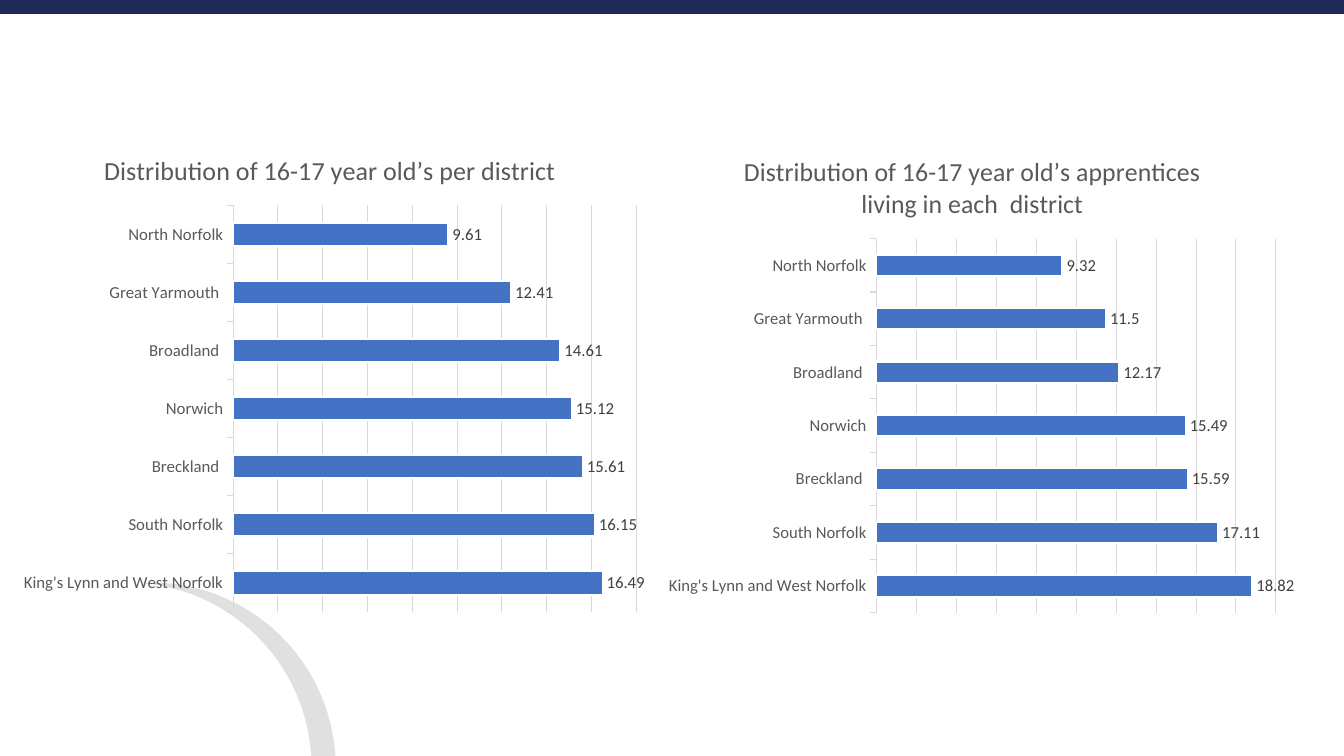
from dataclasses import dataclass

from pptx import Presentation
from pptx import util as u
from pptx.chart.data import CategoryChartData
from pptx.dml.color import RGBColor
from pptx.enum import chart as ch, shapes


@dataclass(frozen=True)
class Theme:
    font: str = "Calibri"
    white: str = "FFFFFF"
    navy: str = "1D2A5A"
    crescent: str = "E0E0E0"
    bar: str = "4472C4"
    grid: str = "D9D9D9"
    text: str = "595959"
    value: str = "404040"
    title_size: float = 18.6
    label_size: float = 12


T = Theme()

DISTRICTS = ["King's Lynn and West Norfolk", "South Norfolk", "Breckland ",
             "Norwich", "Broadland ", "Great Yarmouth ", "North Norfolk"]
RESIDENTS = [16.49, 16.15, 15.61, 15.12, 14.61, 12.41, 9.61]
APPRENTICES = [18.82, 17.11, 15.59, 15.49, 12.17, 11.5, 9.32]


def rgb(value):
    return RGBColor.from_string(value)


def style_font(font, size, color):
    font.name = T.font
    font.size = u.Pt(size)
    font.bold = False
    font.color.rgb = rgb(color)


def add_text(tf, text, *, size, color):
    r = tf.paragraphs[0].add_run()
    r.text = text
    style_font(r.font, size, color)


def style_line(line, color, width):
    line.color.rgb = rgb(color)
    line.width = u.Pt(width)


def add_filled(s, kind, x, y, w, h, color):
    sp = s.shapes.add_shape(kind, u.Cm(x), u.Cm(y), u.Cm(w), u.Cm(h))
    sp.shadow.inherit = False
    sp.fill.solid()
    sp.fill.fore_color.rgb = rgb(color)
    sp.line.fill.background()
    return sp


def add_backdrop(s, x, y, w):
    """Crescent at the foot and navy band across the top."""
    size, thickness = 9.32, 0.61
    for left, color in ((-0.86, T.crescent), (-0.86 - thickness, T.white)):
        add_filled(s, shapes.MSO_SHAPE.OVAL, x + left, y + 14.68,
                   size, size, color)
    band = add_filled(s, shapes.MSO_SHAPE.RECTANGLE, x, y, w, 0.33, T.navy)
    style_line(band.line, T.navy, 1)


def add_district_chart(s, x, y, w, h, title, values, top):
    """Bar chart of the share of each district, in the given box."""
    data = CategoryChartData()
    data.categories = DISTRICTS
    data.add_series("Series 1", values)
    chart = s.shapes.add_chart(ch.XL_CHART_TYPE.BAR_CLUSTERED, u.Cm(x),
                               u.Cm(y), u.Cm(w), u.Cm(h), data).chart
    style_font(chart.font, T.label_size, T.text)
    chart.has_legend = False
    chart.has_title = True
    add_text(chart.chart_title.text_frame, title,
             size=T.title_size, color=T.text)

    # Axes
    cat = chart.category_axis
    cat.major_tick_mark = ch.XL_TICK_MARK.OUTSIDE
    cat.minor_tick_mark = ch.XL_TICK_MARK.NONE
    cat.has_major_gridlines = False
    style_font(cat.tick_labels.font, T.label_size, T.text)
    style_line(cat.format.line, T.grid, 0.75)
    val = chart.value_axis
    val.visible = False
    val.minimum_scale, val.maximum_scale, val.major_unit = 0, top, 2
    val.has_major_gridlines = True
    style_line(val.major_gridlines.format.line, T.grid, 0.75)

    # Bars and their values
    plot = chart.plots[0]
    plot.gap_width = 150
    plot.vary_by_categories = False
    bars = plot.series[0]
    bars.format.fill.solid()
    bars.format.fill.fore_color.rgb = rgb(T.bar)
    style_line(bars.format.line, T.white, 1.5)
    labels = bars.data_labels
    labels.show_value = True
    labels.position = ch.XL_LABEL_POSITION.OUTSIDE_END
    style_font(labels.font, T.label_size, T.value)


def main():
    prs = Presentation()
    prs.slide_width, prs.slide_height = u.Cm(33.87), u.Cm(19.05)
    s = prs.slides.add_slide(prs.slide_layouts[6])
    add_backdrop(s, 0, 0, 33.87)
    add_district_chart(s, 0.28, 3.33, 16.08, 12.34,
                       "Distribution of 16-17 year old’s per district",
                       RESIDENTS, 18)
    add_district_chart(s, 16.54, 3.35, 16.08, 12.34,
                       "Distribution of 16-17 year old’s apprentices "
                       "living in each  district", APPRENTICES, 20)
    prs.save("out.pptx")


if __name__ == "__main__":
    main()
